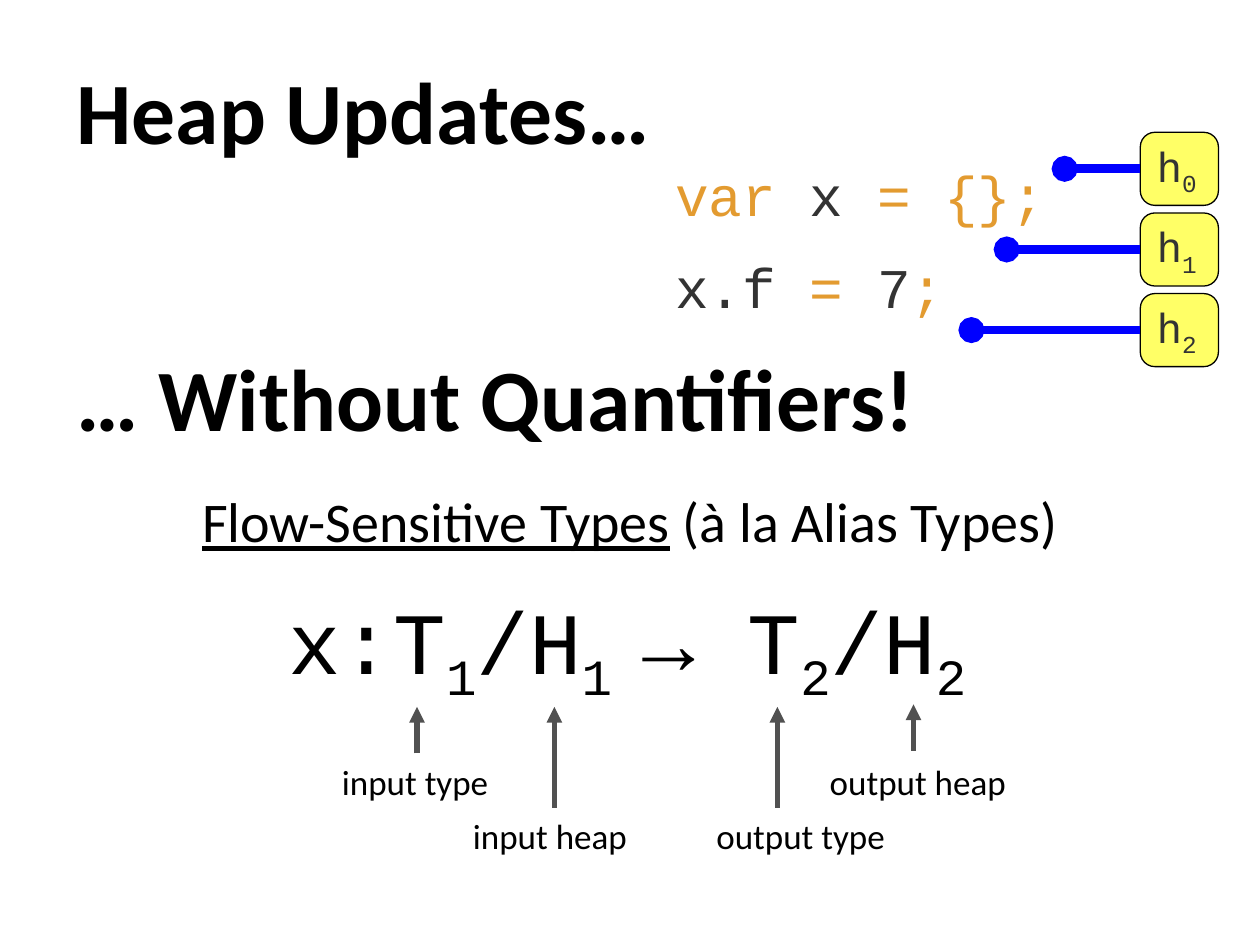
import pptx
import pptx.dml.color
import pptx.enum.shapes
import pptx.enum.text
import pptx.oxml.ns
import pptx.util
from lxml import etree

Inches, Pt = pptx.util.Inches, pptx.util.Pt
ALIGN = pptx.enum.text.PP_ALIGN
ANCHOR = pptx.enum.text.MSO_ANCHOR
STRAIGHT = pptx.enum.shapes.MSO_CONNECTOR.STRAIGHT

# Content
BLACK, INK, ORANGE = "000000", "333333", "E39B30"
BLUE, GREY, YELLOW = "0000FF", "515151", "FFFF66"
SANS, MONO = "Calibri", "Courier New"

TITLE = "Heap Updates…"
SUBTITLE = "… Without Quantifiers!"
TOPIC = [("Flow-Sensitive Types", {"underline": True}), (" (à la Alias Types)", {})]
SUB = {"sub": True}
FORMULA = [("x:T", {}), ("1", SUB), ("/H", {}), ("1 ", SUB),
           ("→ T", {}), ("2", SUB), ("/H", {}), ("2", SUB)]
KEY, PLAIN = {"color": ORANGE}, {"color": INK}
CODE = [[("var ", KEY), ("x ", PLAIN), ("= {};", KEY)],
        [("x.f ", PLAIN), ("= ", KEY), ("7", PLAIN), (";", KEY)]]
HEAP_DOTS = [8.45, 7.99, 7.71]  # left end of each heap marker
# label, label left, label top, arrow x, arrow tip y
LABELS = [("input type", 2.36, 5.98, 3.31, 5.61),
          ("input heap", 3.43, 6.41, 4.40, 5.61),
          ("output type", 5.42, 6.41, 6.17, 5.61),
          ("output heap", 6.35, 5.98, 7.25, 5.59)]


def rgb(value):
    return pptx.dml.color.RGBColor.from_string(value)


def write(shape, lines, size, font, color=BLACK, bold=False, align=ALIGN.LEFT,
          anchor=ANCHOR.MIDDLE, after=0, spacing=1.0):
    """Fill a shape with lines, each a list of (text, style) spans."""
    frame = shape.text_frame
    frame.word_wrap = True
    frame.auto_size = pptx.enum.text.MSO_AUTO_SIZE.NONE
    frame.vertical_anchor = anchor
    for index, spans in enumerate(lines):
        para = frame.add_paragraph() if index else frame.paragraphs[0]
        para.alignment = align
        para.space_before, para.space_after = Pt(0), Pt(after)
        para.line_spacing = spacing
        para.font.name, para.font.size, para.font.bold = font, Pt(size), bold
        para.font.color.rgb = rgb(color)
        for text, style in spans:
            span = para.add_run()
            span.text = text
            if "color" in style:
                span.font.color.rgb = rgb(style["color"])
            if "underline" in style:
                span.font.underline = True
            if "sub" in style:
                span._r.get_or_add_rPr().set("baseline", "-25000")
    return frame


def add_text(left, top, width, height, lines, size, font, **options):
    box = page.shapes.add_textbox(*map(Inches, (left, top, width, height)))
    return write(box, lines, size, font, **options)


def add_line(start, end, color, width, end_tag, end_type):
    line = page.shapes.add_connector(STRAIGHT, *map(Inches, (*start, *end)))
    line.line.color.rgb = rgb(color)
    line.line.width = Pt(width)
    tip = etree.SubElement(line.line._get_or_add_ln(), pptx.oxml.ns.qn(end_tag))
    tip.set("type", end_type)
    etree.SubElement(line._element.spPr, pptx.oxml.ns.qn("a:effectLst"))
    return line


deck = pptx.Presentation()
deck.slide_width, deck.slide_height = Inches(10), Inches(7.5)
page = deck.slides.add_slide(deck.slide_layouts[5])

# Headings
title = page.shapes.title
title.left, title.top, title.width, title.height = map(Inches, (0.51, 0.42, 9.49, 0.89))
write(title, [[(TITLE, {})]], 50, SANS, bold=True)
add_text(0.51, 2.7, 9.49, 0.89, [[(SUBTITLE, {})]], 50, SANS, bold=True)

# Code
code = add_text(5.36, 1.24, 2.96, 1.25, CODE, 32, MONO,
                anchor=ANCHOR.TOP, after=12, spacing=1.06)
code.margin_left = code.margin_right = code.margin_top = code.margin_bottom = 0

# Heap markers
for index, dot_x in enumerate(HEAP_DOTS):
    top, height = 1.05 + 0.64 * index, 0.58
    heap = page.shapes.add_shape(pptx.enum.shapes.MSO_SHAPE.ROUNDED_RECTANGLE,
                                 Inches(9.05), Inches(top), Inches(0.62), Inches(height))
    heap.adjustments[0] = 0.2
    heap.shadow.inherit = False
    heap.fill.solid()
    heap.fill.fore_color.rgb = rgb(YELLOW)
    heap.line.color.rgb = rgb(BLACK)
    heap.line.width = Pt(0.75)
    write(heap, [[("h", {}), (str(index), SUB)]], 24, MONO, color=INK)
    middle = top + height / 2
    marker = add_line((dot_x, middle), (9.05, middle), BLUE, 5, "a:headEnd", "oval")
    marker.end_connect(heap, 1)

# Function type and its labelled parts
add_text(0, 3.81, 10, 0.64, [TOPIC], 32, SANS, align=ALIGN.CENTER, after=24)
add_text(-0.02, 4.66, 10, 0.94, [FORMULA], 50, MONO, align=ALIGN.CENTER)
for label, left, top, arrow_x, tip_y in LABELS:
    add_text(left, top, 1.87, 0.44, [[(label, {})]], 20, SANS, align=ALIGN.CENTER, after=18)
    tail_y = top if tip_y == 5.61 else top - 0.02
    add_line((arrow_x, tail_y), (arrow_x, tip_y), GREY, 3, "a:tailEnd", "triangle")

deck.save("out.pptx")
